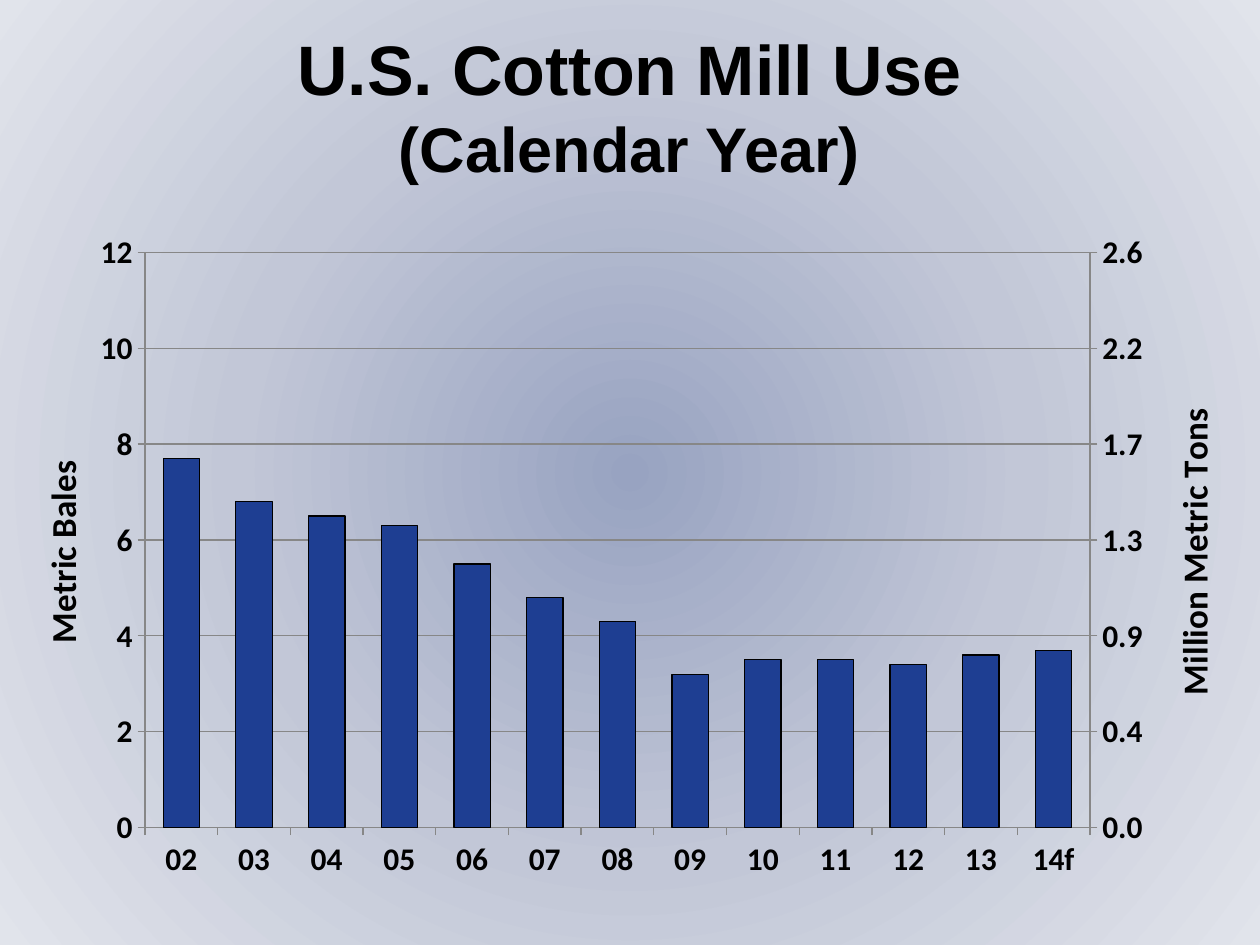
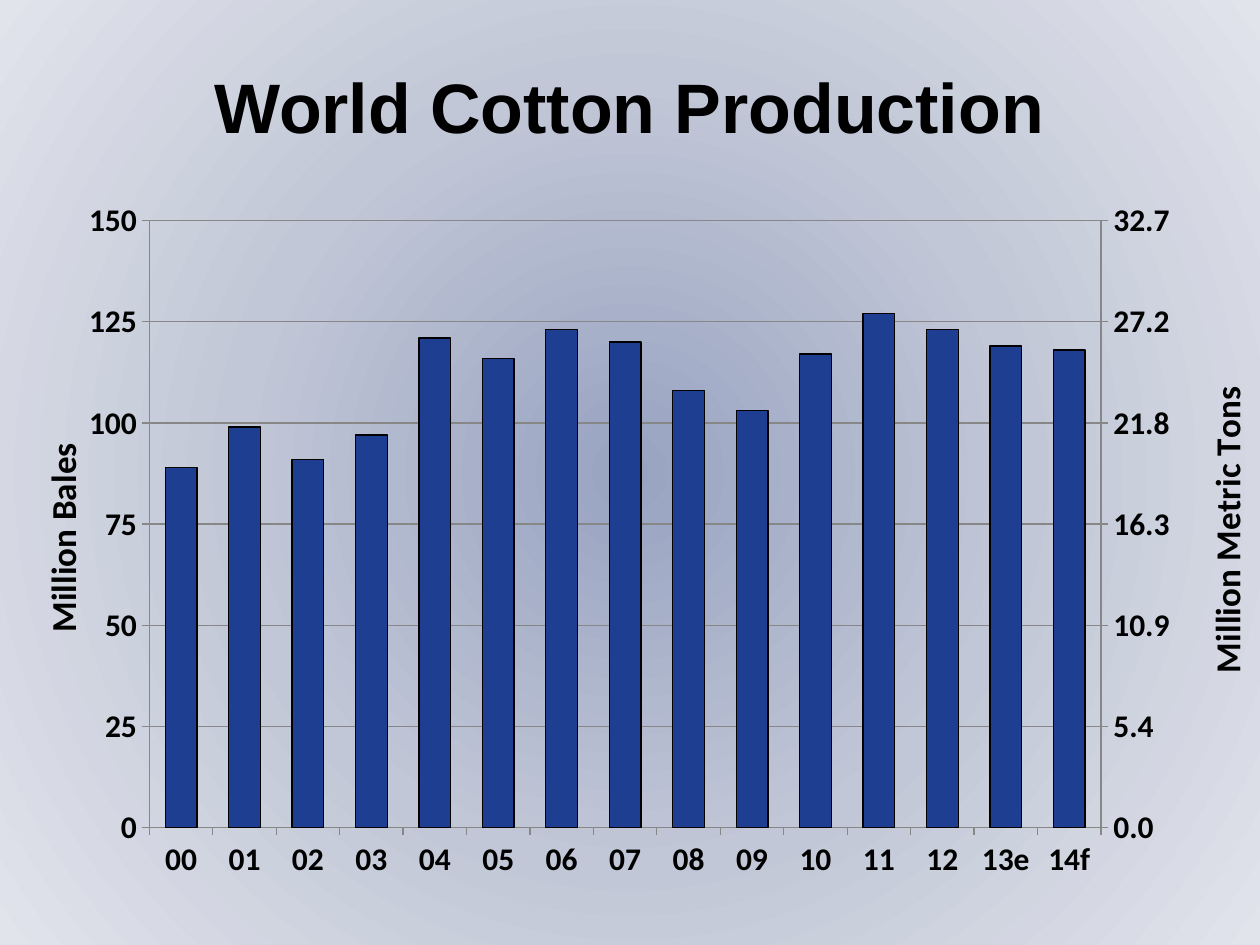
from copy import deepcopy

from pptx import Presentation
from pptx.chart.axis import CategoryAxis, ValueAxis
from pptx.chart.data import CategoryChartData
from pptx.dml.color import RGBColor
from pptx.enum.chart import XL_CHART_TYPE as ChartType
from pptx.enum.chart import XL_TICK_LABEL_POSITION as LabelPosition
from pptx.enum.chart import XL_TICK_MARK as TickMark
from pptx.enum.text import MSO_ANCHOR, MSO_AUTO_SIZE, PP_ALIGN
from pptx.oxml import parse_xml
from pptx.oxml.ns import nsdecls, qn
from pptx.util import Inches, Pt

COLORS = {
    "text": "000000",
    "bar": "1E3E92",
    "grid": "878787",
    "center": "98A3C1",
    "middle": "C2C7D7",
    "edge": "E1E4EB",
}
TITLE_FONT, CHART_FONT = "Arial", "Calibri"
WIDTH, HEIGHT = Inches(10), Inches(7.5)
TITLE_BOX = (0.025, 0.045, 0.949, 0.133)  # shares of the slide
BALES_PER_TON = 4.59


def rgb(name):
    return RGBColor.from_string(COLORS[name])


def to_slide(box):
    return [round(share * side) for share, side in zip(box, (WIDTH, HEIGHT) * 2)]


def style_font(font, name, size):
    font.name, font.size, font.bold = name, Pt(size), True
    font.color.rgb = rgb("text")


def paint_background(master):
    """Give every slide a circular gradient that starts in the middle."""
    master.background.fill.gradient()
    gradient = master.element.find(".//" + qn("a:gradFill"))
    stops = "".join(
        f'<a:gs pos="{position}"><a:srgbClr val="{COLORS[name]}"/></a:gs>'
        for position, name in ((0, "center"), (50000, "middle"), (100000, "edge"))
    )
    gradient.getparent().replace(gradient, parse_xml(
        f'<a:gradFill {nsdecls("a")} rotWithShape="1"><a:gsLst>{stops}</a:gsLst>'
        '<a:path path="circle"><a:fillToRect l="50000" t="50000" r="50000" b="50000"/>'
        "</a:path></a:gradFill>"))


def set_layout(parent, index, **places):
    """Fix a chart part at shares of the chart's size."""
    for layout in parent.findall(qn("c:layout")):
        parent.remove(layout)
    target = '<c:layoutTarget val="inner"/>' if "w" in places else ""
    modes = "".join(f'<c:{key}Mode val="edge"/>' for key in "xy")
    values = "".join(f'<c:{key} val="{value}"/>' for key, value in places.items())
    parent.insert(index, parse_xml(
        f'<c:layout {nsdecls("c")}><c:manualLayout>{target}{modes}{values}'
        "</c:manualLayout></c:layout>"))


def style_value_axis(axis, element, title, title_at, maximum, step, number_format):
    axis.minimum_scale, axis.maximum_scale, axis.major_unit = 0, maximum, step
    axis.tick_labels.number_format = number_format
    axis.tick_labels.number_format_is_linked = False
    text_frame = axis.axis_title.text_frame
    text_frame.text = title
    style_font(text_frame.paragraphs[0].font, CHART_FONT, 20)
    title_element = element.find(qn("c:title"))
    body = title_element.find(".//" + qn("a:bodyPr"))
    body.set("rot", "-5400000")
    body.set("vert", "horz")
    set_layout(title_element, 1, x=title_at[0], y=title_at[1])


def add_right_axis(plot_area):
    """Move the second series to its own value axis and return that axis."""
    bales_bars = plot_area.find(qn("c:barChart"))
    tons_bars = deepcopy(bales_bars)
    bales_bars.remove(bales_bars.findall(qn("c:ser"))[1])
    tons_bars.remove(tons_bars.find(qn("c:ser")))
    bales_bars.addnext(tons_bars)

    left = plot_area.find(qn("c:valAx"))
    right = deepcopy(left)
    categories = deepcopy(plot_area.find(qn("c:catAx")))
    left.addnext(right)
    right.addnext(categories)
    ids = ("50010", "50020")
    for reference, axis_id in zip(tons_bars.findall(qn("c:axId")), ids):
        reference.set("val", axis_id)
    for axis, own, other in ((categories, *ids), (right, *ids[::-1])):
        axis.find(qn("c:axId")).set("val", own)
        axis.find(qn("c:crossAx")).set("val", other)
    right.find(qn("c:axPos")).set("val", "r")
    for crosses in right.findall(qn("c:crosses")):
        right.remove(crosses)
    right.find(qn("c:crossAx")).addnext(
        parse_xml(f'<c:crosses {nsdecls("c")} val="max"/>'))
    CategoryAxis(categories).visible = False
    right_axis = ValueAxis(right)
    right_axis.has_major_gridlines = False
    return right_axis, right


def add_title(slide, lines):
    title = slide.shapes.title
    title.left, title.top, title.width, title.height = to_slide(TITLE_BOX)
    text_frame = title.text_frame
    text_frame.text = "\n".join(lines)
    text_frame.auto_size = MSO_AUTO_SIZE.NONE
    text_frame.vertical_anchor = MSO_ANCHOR.MIDDLE
    for paragraph, size in zip(text_frame.paragraphs, (40, 36)):
        paragraph.alignment = PP_ALIGN.CENTER
        style_font(paragraph.font, TITLE_FONT, size)


def add_cotton_chart(slide, box, kind, categories, bales, tons, plot,
                     bales_axis, titles_at, maximum, step, number_format):
    data = CategoryChartData()
    data.categories = categories
    data.add_series("Series 1", bales)
    data.add_series("Series 2", tons)
    chart = slide.shapes.add_chart(kind, *to_slide(box), data).chart
    chart.has_legend = chart.has_title = False
    style_font(chart.font, CHART_FONT, 18)

    bars = chart.plots[0]
    bars.gap_width = 100
    bars.vary_by_categories = False
    bales_series, tons_series = bars.series
    bales_series.format.fill.solid()
    bales_series.format.fill.fore_color.rgb = rgb("bar")
    bales_series.format.line.color.rgb = rgb("text")
    bales_series.format.line.width = Pt(0.75)
    tons_series.format.fill.background()
    tons_series.format.line.fill.background()

    left_axis = chart.value_axis
    chart.category_axis.tick_label_position = LabelPosition.LOW
    for axis in (chart.category_axis, left_axis):
        axis.major_tick_mark = TickMark.OUTSIDE
        axis.minor_tick_mark = TickMark.NONE
        axis.format.line.color.rgb = rgb("grid")
    left_axis.has_major_gridlines = True
    left_axis.major_gridlines.format.line.color.rgb = rgb("grid")

    plot_area = chart.element.find(".//" + qn("c:plotArea"))
    set_layout(plot_area, 0, **dict(zip("xywh", plot)))
    right_axis, right_element = add_right_axis(plot_area)
    style_value_axis(left_axis, plot_area.find(qn("c:valAx")), bales_axis,
                     titles_at[0], maximum, step, number_format)
    style_value_axis(right_axis, right_element, "Million Metric Tons", titles_at[1],
                     maximum / BALES_PER_TON, step / BALES_PER_TON, "#,##0.0")


MILL_USE = dict(
    box=(0.025, 0.156, 0.949, 0.799),
    kind=ChartType.COLUMN_STACKED,
    categories=[f"{year:02}" for year in range(2, 14)] + ["14f"],
    bales=[7.7, 6.8, 6.5, 6.3, 5.5, 4.8, 4.3, 3.2, 3.5, 3.5, 3.4, 3.6, 3.7],
    tons=[1.67, 1.48, 1.41, 1.38, 1.19, 1.05, 0.95, 0.7, 0.77, 0.75, 0.74, 0.78, 0.8],
    plot=(0.095, 0.139, 0.791, 0.762),
    bales_axis="Metric Bales",
    titles_at=((0, 0.406), (0.947, 0.337)),
    maximum=12, step=2, number_format="0",
)
PRODUCTION = dict(
    box=(0.025, 0.156, 0.975, 0.799),
    kind=ChartType.COLUMN_CLUSTERED,
    categories=[f"{year:02}" for year in range(13)] + ["13e", "14f"],
    bales=[89, 99, 91, 97, 121, 116, 123, 120, 108, 103, 117, 127, 123, 119, 118],
    tons=[19.4, 21.5, 19.8, 21.1, 26.5, 25.3, 26.8, 26.2, 23.5, 22.4, 25.5, 27.6,
          26.8, 25.9, 25.7],
    plot=(0.096, 0.097, 0.775, 0.804),
    bales_axis="Million Bales",
    titles_at=((0, 0.383), (0.948, 0.308)),
    maximum=150, step=25, number_format="General",
)


def main():
    presentation = Presentation()
    presentation.slide_width, presentation.slide_height = WIDTH, HEIGHT
    paint_background(presentation.slide_master)
    for title_lines, chart in (
        (["U.S. Cotton Mill Use", "(Calendar Year)"], MILL_USE),
        (["World Cotton Production"], PRODUCTION),
    ):
        slide = presentation.slides.add_slide(presentation.slide_layouts[5])
        add_title(slide, title_lines)
        add_cotton_chart(slide, **chart)
    presentation.save("out.pptx")


if __name__ == "__main__":
    main()
